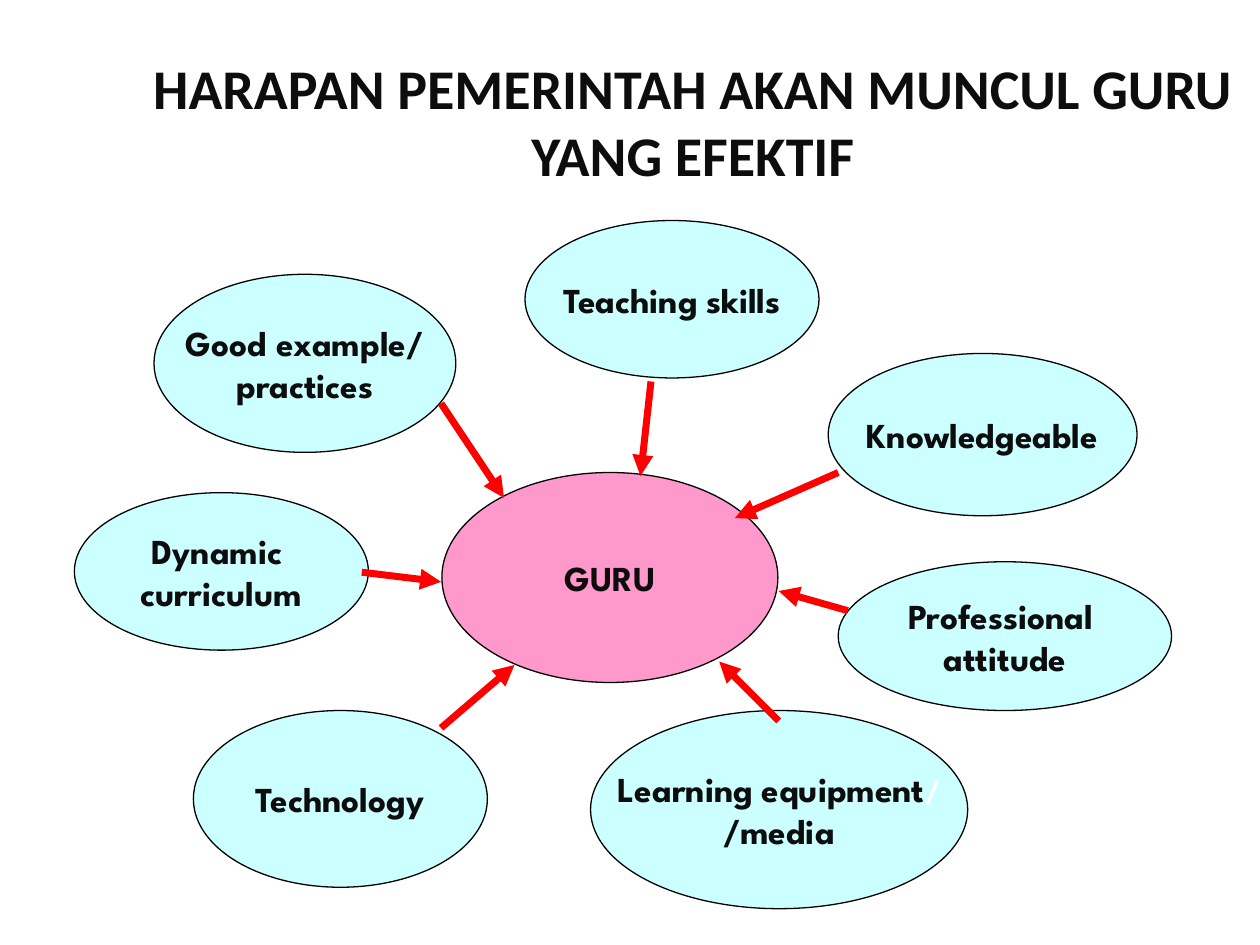
from lxml import etree
from pptx import Presentation
from pptx.dml.color import RGBColor
from pptx.enum.shapes import MSO_CONNECTOR, MSO_SHAPE
from pptx.enum.text import MSO_ANCHOR, PP_ALIGN
from pptx.oxml.ns import qn
from pptx.util import Pt

INK = RGBColor(0x0D, 0x0D, 0x0D)
WHITE = RGBColor(0xFF, 0xFF, 0xFF)
BLACK = RGBColor(0, 0, 0)
PINK = RGBColor(0xFF, 0x99, 0xCC)
CYAN = RGBColor(0xCC, 0xFF, 0xFF)
RED = RGBColor(0xFF, 0, 0)

prs = Presentation()
prs.slide_width, prs.slide_height = Pt(720), Pt(540)
s = prs.slides.add_slide(prs.slide_layouts[5])

# Title
title = s.shapes.title
title.left, title.top, title.width, title.height = Pt(72), Pt(24), Pt(648), Pt(90)
tf = title.text_frame
tf.word_wrap = True
tf.vertical_anchor = MSO_ANCHOR.MIDDLE
p = tf.paragraphs[0]
p.text = "HARAPAN PEMERINTAH AKAN MUNCUL GURU YANG EFEKTIF"
p.alignment = PP_ALIGN.CENTER
p.font.name, p.font.size, p.font.bold = "Calibri", Pt(32), True
p.font.color.rgb = INK

# Ellipses: box, fill, lines of text split into runs
ellipses = [
    ((252.5, 270, 192, 120), PINK, [["GURU"]]),
    ((110.5, 406, 168, 101), CYAN, [["Technology"]]),
    ((88, 156.75, 172.5, 101.75), CYAN, [["Good example/"], ["practices"]]),
    ((42.5, 281.5, 168, 90), CYAN, [["Dynamic", " "], ["curriculum"]]),
    ((300, 126, 168, 90), CYAN, [["Teaching", " ", "skills"]]),
    ((473.25, 202, 176.5, 92.75), CYAN, [["Knowledgeable"]]),
    ((479, 321, 190.5, 85), CYAN, [["Professional", " "], ["attitude"]]),
    ((337.5, 406, 215.5, 113.25), CYAN,
     [["Learning", " ", "equipment", "/"], ["/media"]]),
]
for box, fill, lines in ellipses:
    sp = s.shapes.add_shape(MSO_SHAPE.OVAL, *map(Pt, box))
    sp.shadow.inherit = False
    sp.fill.solid()
    sp.fill.fore_color.rgb = fill
    sp.line.color.rgb = BLACK
    sp.line.width = Pt(0.75)
    tf = sp.text_frame
    tf.word_wrap = False
    tf.vertical_anchor = MSO_ANCHOR.MIDDLE
    for i, runs in enumerate(lines):
        p = tf.add_paragraph() if i else tf.paragraphs[0]
        p.alignment = PP_ALIGN.CENTER
        p.font.name, p.font.bold = "League Spartan", True
        for text in runs:
            r = p.add_run()
            r.text = text
            separator = text in (" ", "/")
            r.font.size = Pt(18 if separator else 20)
            r.font.color.rgb = WHITE if separator else INK

# Arrows towards the centre
arrows = [
    (372, 218, 366, 272),
    (479, 270, 420, 296),
    (484.5, 349, 445, 337.75),
    (445, 412, 411, 378),
    (252, 416, 294, 380),
    (206.75, 327, 252, 332.5),
    (252, 230.5, 288, 284.5),
]
for ends in arrows:
    arrow = s.shapes.add_connector(MSO_CONNECTOR.STRAIGHT, *map(Pt, ends))
    arrow.line.color.rgb = RED
    arrow.line.width = Pt(4)
    etree.SubElement(arrow.line._get_or_add_ln(), qn("a:tailEnd"), type="triangle")
    etree.SubElement(arrow._element.spPr, qn("a:effectLst"))

prs.save("out.pptx")
